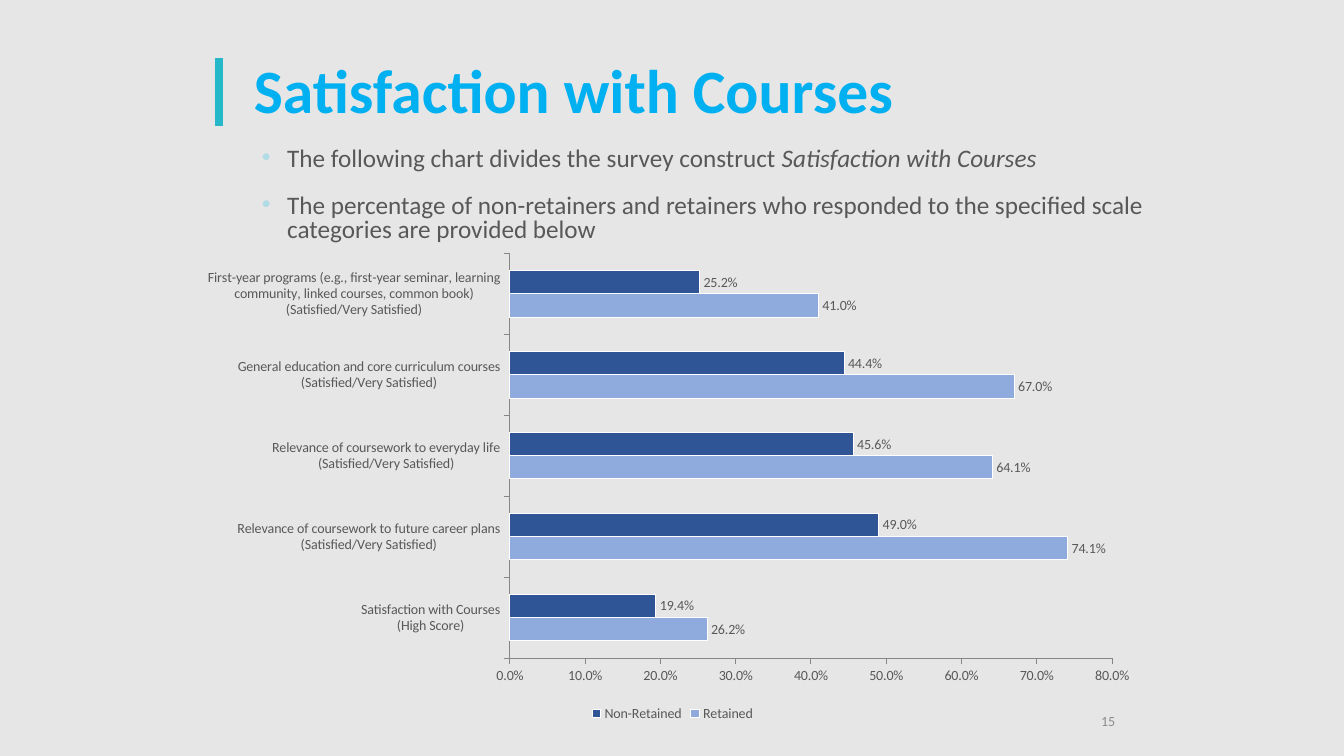
import pptx
import pptx.chart.data
import pptx.dml.color
import pptx.enum.chart
import pptx.enum.shapes
import pptx.enum.text
import pptx.oxml
import pptx.oxml.ns
import pptx.util
from lxml import etree

INK = {"back": "E7E6E6", "title": "00B0F0", "bar": "25B8C9", "page": "8C8C8C",
       "text": "58585A", "dot": "B1DCE5", "light": "8FAADC", "dark": "2F5597",
       "axis": "868686", "white": "FFFFFF"}
FONT = "Calibri"
FMT = "###0.0%"
qn = pptx.oxml.ns.qn
inch = pptx.util.Inches
ALIGN = pptx.enum.text.PP_ALIGN
ANCHOR = pptx.enum.text.MSO_ANCHOR


def tint(name):
    return pptx.dml.color.RGBColor.from_string(INK[name])


def write(box, paras, size, color, bold=False, align=ALIGN.LEFT,
          anchor=ANCHOR.TOP, lead=1.0, gaps=(0, 0), dot=None):
    """Add a text box; each paragraph is a list of (text, italic) runs."""
    frame = deck_page.shapes.add_textbox(*map(inch, box)).text_frame
    frame.word_wrap = True
    frame.vertical_anchor = anchor
    for i, runs in enumerate(paras):
        para = frame.add_paragraph() if i else frame.paragraphs[0]
        para.alignment = align
        para.line_spacing = lead
        para.space_before, para.space_after = map(pptx.util.Pt, gaps)
        if dot:
            props = para._p.get_or_add_pPr()
            props.set("marL", str(inch(0.25)))
            props.set("indent", str(-inch(0.25)))
            hue = etree.SubElement(props, qn("a:buClr"))
            etree.SubElement(hue, qn("a:srgbClr"), val=INK[dot])
            etree.SubElement(props, qn("a:buFont"), typeface="Arial")
            etree.SubElement(props, qn("a:buChar"), char="•")
        for text, slant in runs:
            run = para.add_run()
            run.text = text
            run.font.name, run.font.size = FONT, pptx.util.Pt(size)
            run.font.bold, run.font.italic = bold, slant
            run.font.color.rgb = tint(color)


deck = pptx.Presentation()
deck.slide_width, deck.slide_height = inch(13.33), inch(7.5)
deck_page = deck.slides.add_slide(deck.slide_layouts[6])
deck_page.background.fill.solid()
deck_page.background.fill.fore_color.rgb = tint("back")

# Heading with its upright bar
write((2.42, 0.3, 7.5, 1.25), [[("Satisfaction with Courses", False)]], 44, "title",
      bold=True, anchor=ANCHOR.MIDDLE, lead=0.9)
bar = deck_page.shapes.add_connector(
    pptx.enum.shapes.MSO_CONNECTOR.STRAIGHT, *map(inch, (2.17, 0.58, 2.17, 1.25)))
bar.line.color.rgb = tint("bar")
bar.line.width = pptx.util.Pt(6)
etree.SubElement(bar._element.spPr, qn("a:effectLst"))

write((8.83, 6.95, 2.33, 0.4), [[("15", False)]], 10, "page",
      align=ALIGN.RIGHT, anchor=ANCHOR.MIDDLE)
write((2.5, 1.42, 9, 0.92), [
    [("The following chart divides the survey construct ", False),
     ("Satisfaction with Courses", True)],
    [("The percentage of non-retainers and retainers who responded to the "
      "specified scale categories are provided below", False)],
], 18, "text", lead=0.8, gaps=(10, 6), dot="dot")

# Chart, rows from bottom to top
scale = "\n(Satisfied/Very Satisfied)"
rows = [
    ("Satisfaction with Courses\n(High Score)", 0.262, 0.194),
    ("Relevance of coursework to future career plans" + scale, 0.741, 0.49),
    ("Relevance of coursework to everyday life" + scale, 0.641, 0.456),
    ("General education and core curriculum courses" + scale, 0.67, 0.444),
    ("First-year programs (e.g., first-year seminar, learning community, "
     "linked courses, common book)" + scale, 0.41, 0.252),
]
names, kept, lost = zip(*rows)
data = pptx.chart.data.CategoryChartData(number_format=FMT)
data.categories = names
data.add_series("Retained", kept)
data.add_series("Non-Retained", lost)
chart = deck_page.shapes.add_chart(
    pptx.enum.chart.XL_CHART_TYPE.BAR_CLUSTERED,
    *map(inch, (1.93, 2.42, 9.48, 4.78)), data).chart
chart.has_title = False
chart.font.name, chart.font.size = FONT, pptx.util.Pt(10)
chart.font.color.rgb = tint("text")
chart.has_legend = True
chart.legend.position = pptx.enum.chart.XL_LEGEND_POSITION.BOTTOM
chart.legend.include_in_layout = False

for axis in (chart.category_axis, chart.value_axis):
    axis.has_major_gridlines = False
    axis.major_tick_mark = pptx.enum.chart.XL_TICK_MARK.OUTSIDE
    axis.format.line.color.rgb = tint("axis")
    axis.format.line.width = pptx.util.Pt(0.75)
span = chart.value_axis
span.minimum_scale, span.maximum_scale, span.major_unit = 0, 0.8, 0.1
span.tick_labels.number_format = FMT
span.tick_labels.number_format_is_linked = False

plot = chart.plots[0]
plot.gap_width, plot.overlap = 150, 0
plot.vary_by_categories = False
for series, hue in zip(plot.series, ("light", "dark")):
    look = series.format
    look.fill.solid()
    look.fill.fore_color.rgb = tint(hue)
    look.line.color.rgb = tint("white")
    look.line.width = pptx.util.Pt(0.75)
    marks = series.data_labels
    marks.show_value = True
    marks.position = pptx.enum.chart.XL_LABEL_POSITION.OUTSIDE_END
    marks.number_format, marks.number_format_is_linked = FMT, False

# Fixed place of the plot area, as shares of the chart
area = chart._chartSpace.chart.plotArea
for old in area.findall(qn("c:layout")):
    area.remove(old)
layout = pptx.oxml.parse_xml(f'<c:layout {pptx.oxml.ns.nsdecls("c")}/>')
area.insert(0, layout)
manual = etree.SubElement(layout, qn("c:manualLayout"))
for tag, val in (("layoutTarget", "inner"), ("xMode", "edge"), ("yMode", "edge"),
                 ("x", 0.33), ("y", 0.02), ("w", 0.63), ("h", 0.84)):
    etree.SubElement(manual, qn("c:" + tag), val=str(val))

deck.save("out.pptx")
